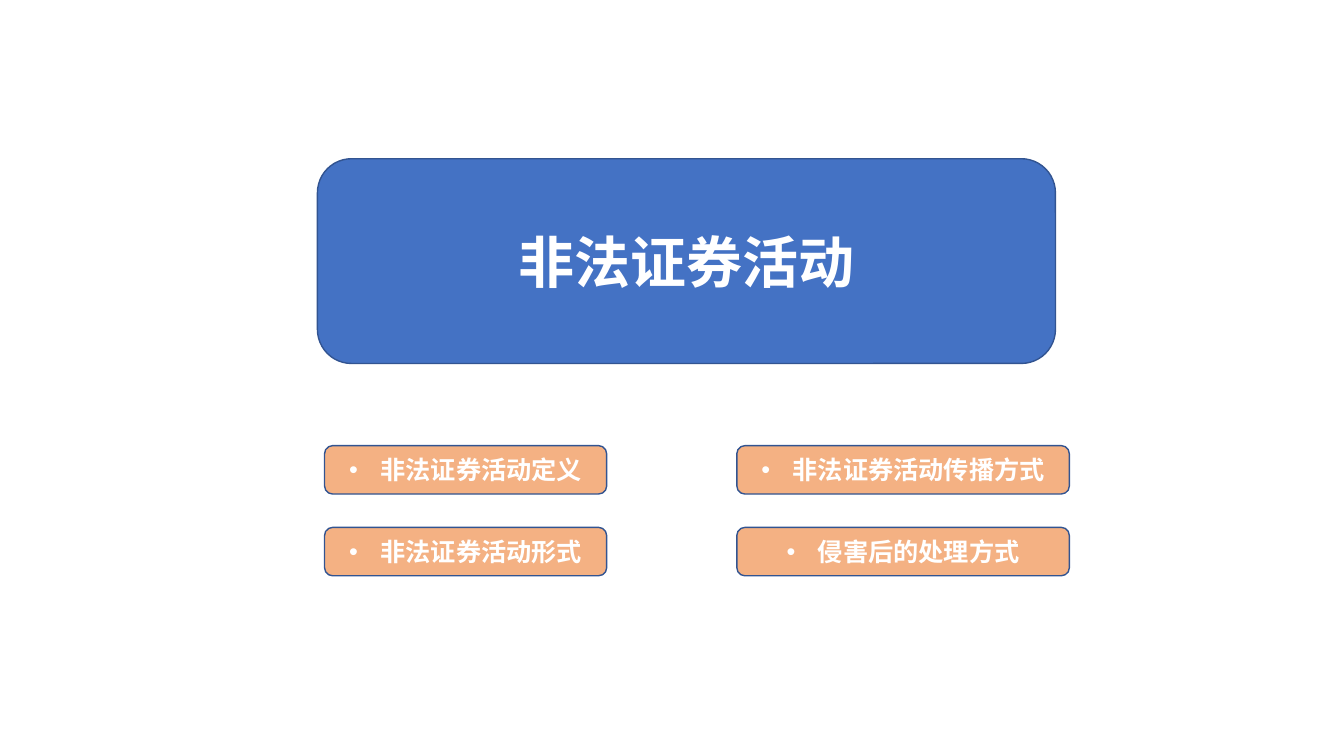
from lxml import etree
from pptx import Presentation
from pptx.dml.color import RGBColor
from pptx.enum import shapes, text
from pptx.oxml import ns
from pptx.util import Cm, Pt

FONT = "Noto Sans CJK SC"
WHITE, BLUE, NAVY, ORANGE = "FFFFFF", "4472C4", "325491", "F4B183"
FRAME_FORMAT = {
    "word_wrap": True,
    "auto_size": text.MSO_AUTO_SIZE.NONE,
    "vertical_anchor": text.MSO_ANCHOR.MIDDLE,
}
TOPIC_COLUMNS = [
    (8.18, 7.11, ["非法证券活动定义", "非法证券活动形式"]),
    (18.57, 8.38, ["非法证券活动传播方式", "侵害后的处理方式"]),
]
TOPIC_TOP, TOPIC_PITCH, TOPIC_HEIGHT = 11.23, 2.06, 1.22


def colour(hex_value):
    return RGBColor.from_string(hex_value)


def set_attributes(target, values):
    for attribute, value in values.items():
        setattr(target, attribute, value)


def add_panel(slide, left, top, width, height, fill):
    panel = slide.shapes.add_shape(
        shapes.MSO_SHAPE.ROUNDED_RECTANGLE, Cm(left), Cm(top), Cm(width), Cm(height)
    )
    panel.shadow.inherit = False
    panel.fill.solid()
    panel.fill.fore_color.rgb = colour(fill)
    panel.line.color.rgb = colour(NAVY)
    panel.line.width = Pt(1)
    return panel


def write_label(holder, wording, size):
    set_attributes(holder.text_frame, FRAME_FORMAT)
    label = holder.text_frame.paragraphs[0]
    label.alignment = text.PP_ALIGN.CENTER
    run = label.add_run()
    run.text = wording
    set_attributes(run.font, {"name": FONT, "size": Pt(size), "bold": True})
    run.font.color.rgb = colour(WHITE)
    etree.SubElement(run.font._element, ns.qn("a:ea"), typeface=FONT)
    return label


def add_bullet(label, indent):
    properties = label._p.get_or_add_pPr()
    properties.set("marL", str(Cm(indent)))
    properties.set("indent", str(-Cm(indent)))
    etree.SubElement(properties, ns.qn("a:buFont"), typeface="Arial")
    etree.SubElement(properties, ns.qn("a:buChar"), char="•")


def add_heading(slide, wording):
    panel = add_panel(slide, 8, 4, 18.6, 5.16, BLUE)
    title = slide.shapes.title
    bounds = {side: getattr(panel, side) for side in ("left", "top", "width", "height")}
    set_attributes(title, bounds)
    panel._element.addnext(title._element)
    write_label(title, wording, 40)


def add_topic(slide, left, top, width, wording):
    topic = add_panel(slide, left, top, width, TOPIC_HEIGHT, ORANGE)
    add_bullet(write_label(topic, wording, 18), 0.79)


def main():
    deck = Presentation()
    set_attributes(deck, {"slide_width": Cm(33.87), "slide_height": Cm(19.05)})
    slide = deck.slides.add_slide(deck.slide_layouts.get_by_name("Title Only"))
    add_heading(slide, "非法证券活动")
    for left, width, topics in TOPIC_COLUMNS:
        for row, wording in enumerate(topics):
            add_topic(slide, left, TOPIC_TOP + row * TOPIC_PITCH, width, wording)
    deck.save("out.pptx")


if __name__ == "__main__":
    main()
